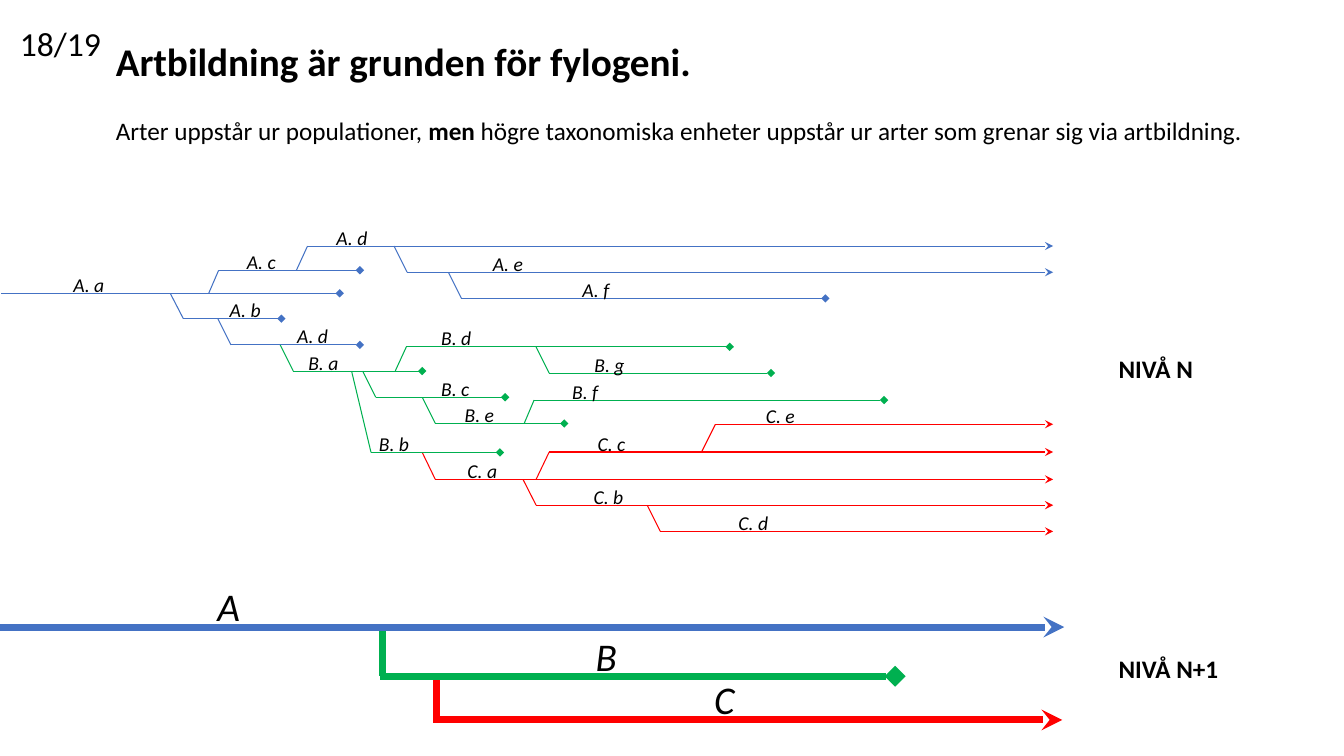
from dataclasses import dataclass

from lxml import etree
from pptx import Presentation
from pptx.dml.color import RGBColor
from pptx.enum.shapes import MSO_CONNECTOR
from pptx.enum.text import MSO_ANCHOR, MSO_AUTO_SIZE
from pptx.oxml.ns import qn
from pptx.slide import Slide
from pptx.util import Cm, Pt

STRAIGHT = MSO_CONNECTOR.STRAIGHT
TOP = MSO_ANCHOR.TOP
NO_FIT = MSO_AUTO_SIZE.NONE

COLOURS = {"A": "4472C4", "B": "00B050", "C": "FF0000", "text": "000000"}
FONT = "Calibri"
PRESENT = 26.54


@dataclass(frozen=True)
class Branch:
    name: str
    parent: str
    fork: float
    start: float
    end: float
    y: float
    label_left: float
    tip: str = "diamond"


@dataclass(frozen=True)
class TreeStyle:
    line_width: float
    label_size: float
    label_rise: float
    label_width: float
    label_height: float
    upright: bool


@dataclass(frozen=True)
class Span:
    text: str
    size: float
    bold: bool = False
    italic: bool = False


@dataclass(frozen=True)
class Caption:
    left: float
    top: float
    width: float
    height: float
    paras: tuple[tuple[Span, ...], ...]
    gap: float = 0


SPECIES = (
    Branch("A. a", "", 0, 0.03, 8.56, 7.39, 1.6),
    Branch("A. c", "A. a", 5.26, 5.51, 9.07, 6.81, 5.97),
    Branch("A. d", "A. c", 7.47, 7.75, PRESENT, 6.2, 8.23, "stealth"),
    Branch("A. e", "A. d", 9.93, 10.26, PRESENT, 6.86, 12.17, "stealth"),
    Branch("A. f", "A. e", 11.3, 11.63, 20.8, 7.52, 14.43),
    Branch("A. b", "A. a", 4.29, 4.62, 7.09, 8.03, 5.54),
    Branch("A. d", "A. b", 5.49, 5.82, 9.07, 8.69, 7.24),
    Branch("B. a", "A. d", 7.06, 7.39, 10.64, 9.35, 7.52),
    Branch("B. c", "B. a", 9.14, 9.47, 12.73, 10.01, 10.87),
    Branch("B. d", "B. a", 9.96, 10.24, 18.39, 8.74, 10.87),
    Branch("B. g", "B. d", 13.51, 13.84, 19.43, 9.4, 14.73),
    Branch("B. e", "B. c", 10.64, 10.97, 14.22, 10.67, 11.46),
    Branch("B. f", "B. e", 13.21, 13.46, 22.28, 10.08, 14.17),
    Branch("B. b", "B. a", 8.86, 9.35, 12.6, 11.4, 9.3),
    Branch("C. a", "B. b", 10.64, 10.97, PRESENT, 12.08, 11.53, "stealth"),
    Branch("C. b", "C. a", 13.18, 13.51, PRESENT, 12.73, 14.71, "stealth"),
    Branch("C. c", "C. a", 13.51, 13.84, PRESENT, 11.39, 14.81, "stealth"),
    Branch("C. e", "C. c", 17.68, 18.03, PRESENT, 10.69, 19.05, "stealth"),
    Branch("C. d", "C. b", 16.31, 16.64, PRESENT, 13.39, 18.36, "stealth"),
)
CLADES = (
    Branch("A", "", 0, 0, 26.82, 15.8, 5.23, "stealth"),
    Branch("B", "A", 9.63, 9.58, 22.56, 17.04, 14.76),
    Branch("C", "B", 11, 10.92, 26.77, 18.14, 17.75, "stealth"),
)
SPECIES_STYLE = TreeStyle(0.75, 14, 0.64, 1.3, 0.56, False)
CLADE_STYLE = TreeStyle(5, 28, 1.24, 1.09, 1.45, True)

CAPTIONS = (
    Caption(2.67, 0.81, 29.36, 3, (
        (Span("Artbildning är grunden för fylogeni.", 28, bold=True),),
        (
            Span("Arter uppstår ur populationer, ", 18),
            Span("men", 18, bold=True),
            Span(" högre taxonomiska enheter uppstår ur arter som grenar sig via artbildning.", 18),
        ),
    ), gap=22),
    Caption(27.94, 8.79, 2.41, 1.02, ((Span("NIVÅ N", 18, bold=True),),)),
    Caption(27.94, 16.33, 3.05, 1.02, ((Span("NIVÅ N+1", 18, bold=True),),)),
    Caption(0.25, 0.46, 2.57, 1.27, ((Span("18/19", 24),),)),
)


def draw_line(page: Slide, begin: tuple[float, float], end: tuple[float, float],
              colour: str, width: float, tip: str = "") -> None:
    line = page.shapes.add_connector(STRAIGHT, *(Cm(value) for value in begin + end))
    line.line.color.rgb = RGBColor.from_string(colour)
    line.line.width = Pt(width)
    properties = line._element.spPr
    if tip:
        etree.SubElement(properties.find(qn("a:ln")), qn("a:tailEnd"), type=tip)
    etree.SubElement(properties, qn("a:effectLst"))


def draw_caption(page: Slide, caption: Caption) -> None:
    box = page.shapes.add_textbox(
        Cm(caption.left), Cm(caption.top), Cm(caption.width), Cm(caption.height))
    frame = box.text_frame
    frame_format = {"word_wrap": False, "auto_size": NO_FIT, "vertical_anchor": TOP}
    for name, value in frame_format.items():
        setattr(frame, name, value)
    for index, spans in enumerate(caption.paras):
        para = frame.add_paragraph() if index else frame.paragraphs[0]
        para.space_before = Pt(caption.gap if index else 0)
        for span in spans:
            run = para.add_run()
            run.text = span.text
            run_format = {"name": FONT, "size": Pt(span.size),
                          "bold": span.bold, "italic": span.italic}
            for name, value in run_format.items():
                setattr(run.font, name, value)
            run.font.color.rgb = RGBColor.from_string(COLOURS["text"])


def draw_tree(page: Slide, branches: tuple[Branch, ...], style: TreeStyle) -> None:
    heights: dict[str, float] = {}
    for branch in branches:
        if branch.parent:
            foot = branch.fork if style.upright else branch.start
            draw_line(page, (branch.fork, heights[branch.parent]), (foot, branch.y),
                      COLOURS[branch.name[0]], style.line_width)
        heights[branch.name] = branch.y
    for branch in branches:
        draw_line(page, (branch.start, branch.y), (branch.end, branch.y),
                  COLOURS[branch.name[0]], style.line_width, branch.tip)
    for branch in branches:
        label = Span(branch.name, style.label_size, italic=True)
        draw_caption(page, Caption(branch.label_left, branch.y - style.label_rise,
                                   style.label_width, style.label_height, ((label,),)))


def main() -> None:
    deck = Presentation()
    deck.slide_width = Cm(33.87)
    deck.slide_height = Cm(19.05)
    page = deck.slides.add_slide(deck.slide_layouts[6])
    draw_tree(page, SPECIES, SPECIES_STYLE)
    draw_tree(page, CLADES, CLADE_STYLE)
    for caption in CAPTIONS:
        draw_caption(page, caption)
    deck.save("out.pptx")


if __name__ == "__main__":
    main()
